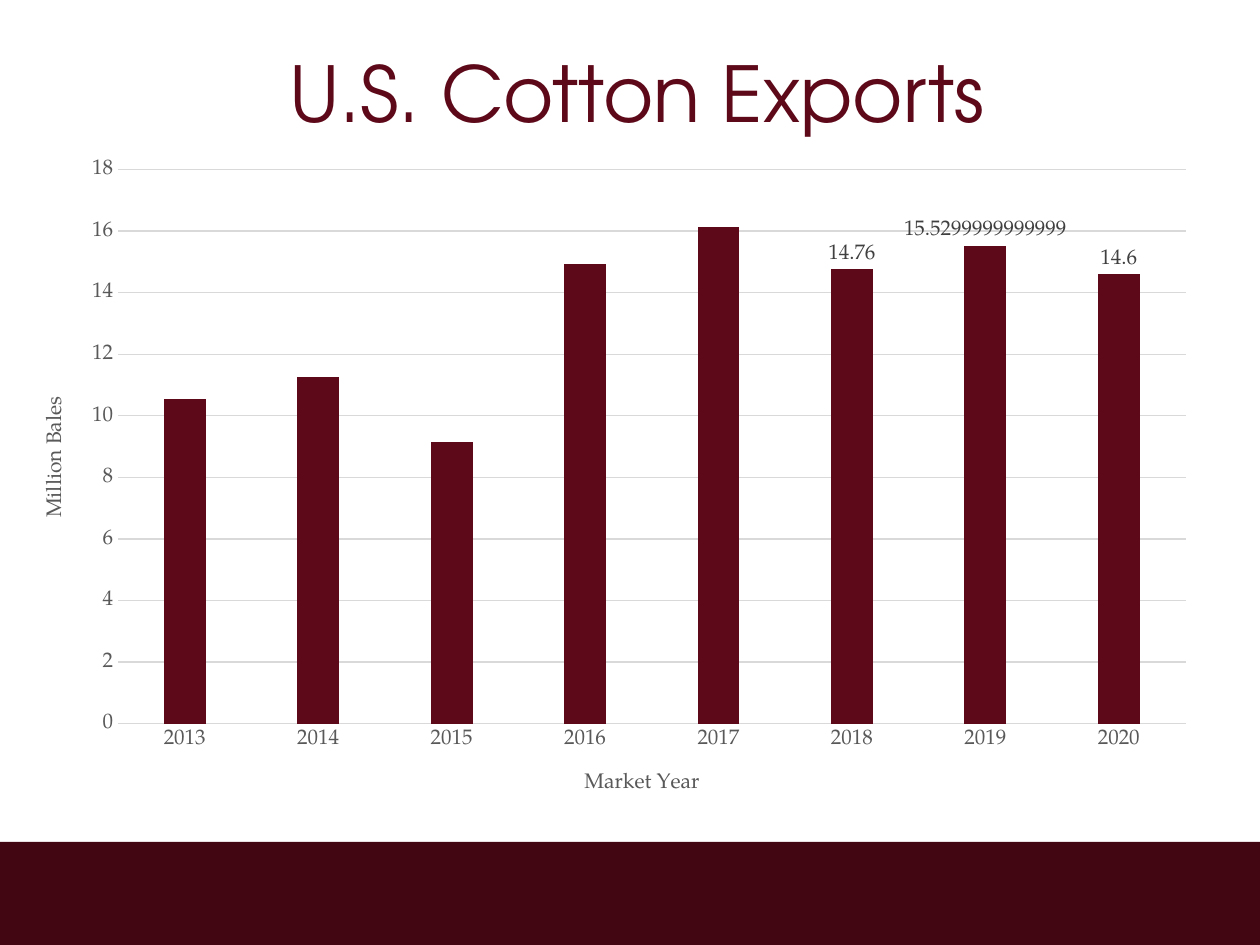
"""Build the U.S. Cotton Exports slide with a column chart by market year."""
import pptx
import pptx.chart.data
import pptx.dml.color
import pptx.enum.chart
import pptx.enum.shapes
import pptx.enum.text
import pptx.oxml
import pptx.oxml.ns
import pptx.util

Pt = pptx.util.Pt
qn = pptx.oxml.ns.qn
COLORS = {"maroon": "5E091A", "band": "410611", "axis": "595959", "label": "404040", "grid": "D9D9D9"}
TITLE_FONT = "TeX Gyre Adventor"
CHART_FONT = "TeX Gyre Pagella"


def format_font(font, name, size, color):
    for key, value in {"name": name, "size": Pt(size), "bold": False}.items():
        setattr(font, key, value)
    font.color.rgb = pptx.dml.color.RGBColor.from_string(COLORS[color])


def place(element, index, **fractions):
    for layout in element.findall(qn("c:layout")):
        element.remove(layout)
    modes = {"layoutTarget": "inner"} if "w" in fractions else {}
    modes.update(xMode="edge", yMode="edge")
    settings = "".join(f'<c:{key} val="{value}"/>' for key, value in {**modes, **fractions}.items())
    namespace = pptx.oxml.ns.nsdecls("c")
    layout = pptx.oxml.parse_xml(
        f"<c:layout {namespace}><c:manualLayout>{settings}</c:manualLayout></c:layout>")
    element.insert(index, layout)


presentation = pptx.Presentation()
presentation.slide_width, presentation.slide_height = Pt(720), Pt(540)
slide = presentation.slides.add_slide(presentation.slide_layouts[5])

band = slide.shapes.add_shape(
    pptx.enum.shapes.MSO_SHAPE.RECTANGLE, Pt(0), Pt(481), Pt(720), Pt(59))
band.shadow.inherit = False
band.fill.solid()
band.fill.fore_color.rgb = pptx.dml.color.RGBColor.from_string(COLORS["band"])
band.line.fill.background()

title = slide.shapes.title
for key, value in {"left": 44.6, "top": 21.6, "width": 639.4, "height": 62}.items():
    setattr(title, key, Pt(value))
title.text_frame.text = "U.S. Cotton Exports"
title.text_frame.vertical_anchor = pptx.enum.text.MSO_ANCHOR.MIDDLE
paragraph = title.text_frame.paragraphs[0]
paragraph.alignment = pptx.enum.text.PP_ALIGN.CENTER
format_font(paragraph.runs[0].font, TITLE_FONT, 44, "maroon")

chart_data = pptx.chart.data.CategoryChartData()
chart_data.categories = [str(year) for year in range(2013, 2021)]
chart_data.add_series("Series 1", [10.53, 11.25, 9.15, 14.92, 16.14, 14.76, 15.5299999999999, 14.6])
chart = slide.shapes.add_chart(
    pptx.enum.chart.XL_CHART_TYPE.COLUMN_CLUSTERED,
    Pt(7.2), Pt(83.5), Pt(684.7), Pt(383.8), chart_data).chart
chart.has_title = False
chart.has_legend = False
format_font(chart.font, CHART_FONT, 12, "axis")
place(chart.plots[0]._element.getparent(), 0, x=0.088, y=0.035, w=0.891, h=0.825)

plot = chart.plots[0]
for key, value in {"gap_width": 219, "overlap": -27, "vary_by_categories": False}.items():
    setattr(plot, key, value)
series = plot.series[0]
series.format.fill.solid()
series.format.fill.fore_color.rgb = pptx.dml.color.RGBColor.from_string(COLORS["maroon"])
series.data_labels.show_value = False
for index in (5, 6, 7):
    label = series.points[index].data_label
    format_font(label.font, CHART_FONT, 12, "label")
    label.position = pptx.enum.chart.XL_LABEL_POSITION.OUTSIDE_END

value_axis, category_axis = chart.value_axis, chart.category_axis
for axis, text, x, y, rotation in (
    (category_axis, "Market Year", 0.474, 0.923, 0),
    (value_axis, "Million Bales", 0.022, 0.367, -90),
):
    axis.major_tick_mark = axis.minor_tick_mark = pptx.enum.chart.XL_TICK_MARK.NONE
    format_font(axis.tick_labels.font, CHART_FONT, 12, "axis")
    axis_title = axis.axis_title
    axis_title.text_frame.text = text
    format_font(axis_title.text_frame.paragraphs[0].runs[0].font, CHART_FONT, 12, "axis")
    axis_title._element.find(".//" + qn("a:bodyPr")).set("rot", str(rotation * 60000))
    place(axis_title._element, 1, x=x, y=y)

for key, value in {"minimum_scale": 0, "maximum_scale": 18, "major_unit": 2}.items():
    setattr(value_axis, key, value)
value_axis.format.line.fill.background()
for line in (category_axis.format.line, value_axis.major_gridlines.format.line):
    line.color.rgb = pptx.dml.color.RGBColor.from_string(COLORS["grid"])
    line.width = Pt(0.75)

presentation.save("out.pptx")
